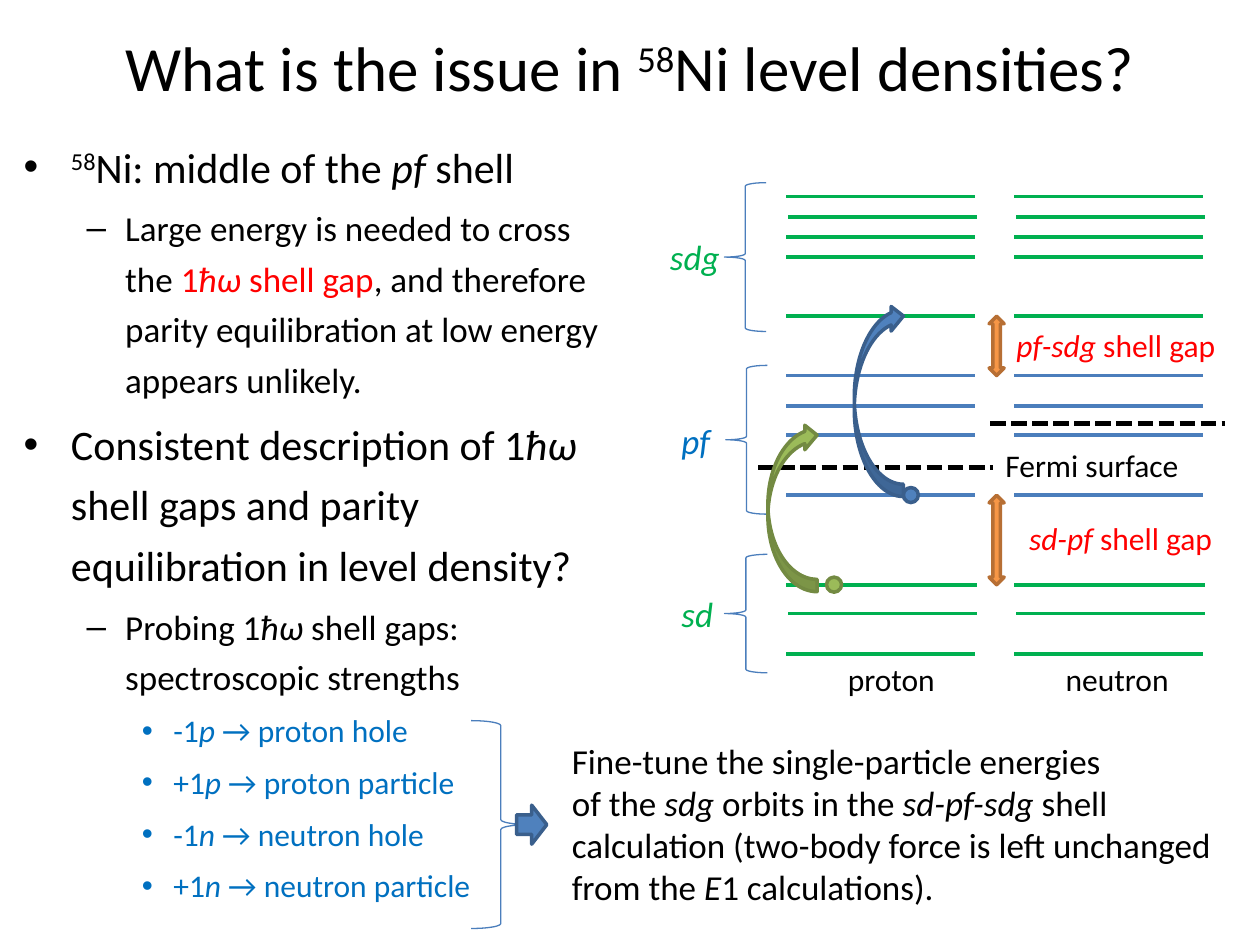
from dataclasses import dataclass

from lxml import etree
from pptx import Presentation
from pptx.dml.color import RGBColor
from pptx.enum import dml, shapes, text
from pptx.oxml import ns
from pptx.util import Pt


@dataclass(frozen=True)
class Theme:
    """Colours and type sizes of the slide."""
    font: str = "Calibri"
    black: str = "000000"
    red: str = "FF0000"
    blue: str = "0070C0"
    green: str = "00B050"
    level_blue: str = "4B7EBC"
    blue_pair: tuple = ("4F81BD", "3A5F8C")
    green_pair: tuple = ("9BBB59", "738A42")
    orange_pair: tuple = ("F79646", "B76F34")
    title: int = 36
    body: tuple = (24, 20, 18)
    shell: int = 20
    label: int = 18


THEME = Theme()
SHAPE = shapes.MSO_SHAPE
BULLETS = (("•", 27, -27), ("–", 58, -22), ("•", 85.5, -18))
PROTON_X, NEUTRON_X, LEVEL_LENGTH = 449.3, 579.6, 107.9
SHELL_LEVELS = (
    (THEME.level_blue, ((283, 0), (248.4, 0), (231.8, 0), (214.6, 0))),
    (THEME.green, ((334.1, 1.2), (350.6, 1.2), (373.7, 0), (180.7, 0), (146.9, 0),
                   (135.4, 0), (334.1, 0), (123.8, 1.2), (112.3, 0))),
)
OUTLINE = (
    (0, [("58", "sup"), "Ni: middle of the ", ("pf", "i"), " shell"]),
    (1, ["Large energy is needed to cross the ", ("1", "red"), ("ħω ", "i red"),
         ("shell gap", "red"),
         ", and therefore parity equilibration at low energy appears unlikely."]),
    (0, ["Consistent description of 1", ("ħω ", "i"),
         "shell gaps and parity equilibration in level density?"]),
    (1, ["Probing 1", ("ħω ", "i"), "shell gaps: spectroscopic strengths"]),
    (2, ["-1", ("p", "i"), " → proton hole"]),
    (2, ["+1", ("p", "i"), " → proton particle"]),
    (2, ["-1", ("n", "i"), " → neutron hole"]),
    (2, ["+1", ("n", "i"), " → neutron particle"]),
)
CONCLUSION = (
    ["Fine-tune the single-particle energies"],
    ["of the ", ("sdg", "i"), " orbits in the ", ("sd-pf-sdg", "i"), " shell"],
    ["calculation (two-body force is left unchanged"],
    ["from the ", ("E", "i"), "1 calculations)."],
)


def rgb(code):
    """Turn a hex code into a colour."""
    return RGBColor.from_string(code)


def add_runs(paragraph, pieces, size, color=THEME.black):
    """Write styled pieces of text into a paragraph."""
    for piece in pieces:
        words, style = (piece, "") if isinstance(piece, str) else piece
        run = paragraph.add_run()
        run.text = words
        run.font.name = THEME.font
        run.font.size = Pt(size)
        run.font.italic = "i" in style.split()
        run.font.color.rgb = rgb(THEME.red if "red" in style else color)
        if "sup" in style:
            run._r.get_or_add_rPr().set("baseline", "30000")


def add_frame(slide, box, wrap):
    """Add a text box and return its frame."""
    frame = slide.shapes.add_textbox(*map(Pt, box)).text_frame
    frame.word_wrap = wrap
    if not wrap:
        frame.auto_size = text.MSO_AUTO_SIZE.SHAPE_TO_FIT_TEXT
    return frame


def add_label(slide, box, lines, size, color=THEME.black):
    """Add an unwrapped label of one or more lines."""
    frame = add_frame(slide, box, False)
    for index, pieces in enumerate(lines):
        paragraph = frame.add_paragraph() if index else frame.paragraphs[0]
        add_runs(paragraph, pieces, size, color)


def add_title(slide):
    """Add the centred heading."""
    frame = add_frame(slide, (8.6, 10.1, 702.8, 55.4), True)
    frame.vertical_anchor = text.MSO_ANCHOR.MIDDLE
    heading = frame.paragraphs[0]
    heading.alignment = text.PP_ALIGN.CENTER
    add_runs(heading, ["What is the issue in ", ("58", "sup"), "Ni level densities?"],
             THEME.title)


def add_outline(slide):
    """Add the bulleted argument."""
    frame = add_frame(slide, (6.5, 71.3, 347.8, 467.3), True)
    for index, (level, pieces) in enumerate(OUTLINE):
        paragraph = frame.add_paragraph() if index else frame.paragraphs[0]
        mark, margin, indent = BULLETS[level]
        size = THEME.body[level]
        paragraph.level = level
        paragraph.line_spacing = 1.2
        if index:
            paragraph.space_before = Pt(size * 0.2)
        properties = paragraph._p.get_or_add_pPr()
        properties.set("marL", str(Pt(margin)))
        properties.set("indent", str(Pt(indent)))
        etree.SubElement(properties, ns.qn("a:buFont")).set("typeface", "Arial")
        etree.SubElement(properties, ns.qn("a:buChar")).set("char", mark)
        add_runs(paragraph, pieces, size, THEME.blue if level == 2 else THEME.black)


def add_level(slide, x, y, length, color, weight=2.25, dashed=False):
    """Add a horizontal energy line."""
    level = slide.shapes.add_connector(
        shapes.MSO_CONNECTOR.STRAIGHT, Pt(x), Pt(y), Pt(x + length), Pt(y))
    level.line.color.rgb = rgb(color)
    level.line.width = Pt(weight)
    if dashed:
        level.line.dash_style = dml.MSO_LINE.SQUARE_DOT
    etree.SubElement(level._element.spPr, ns.qn("a:effectLst"))


def add_figure(slide, preset, box, colors, rotation=0):
    """Add a filled and outlined preset shape."""
    figure = slide.shapes.add_shape(preset, *map(Pt, box))
    figure.shadow.inherit = False
    figure.rotation = rotation
    fill, outline = colors
    figure.fill.solid()
    figure.fill.fore_color.rgb = rgb(fill)
    figure.line.color.rgb = rgb(outline)
    figure.line.width = Pt(2)


def add_brace(slide, preset, box):
    """Add a thin unfilled brace."""
    brace = slide.shapes.add_shape(preset, *map(Pt, box))
    brace.shadow.inherit = False
    brace.fill.background()
    brace.line.color.rgb = rgb(THEME.level_blue)
    brace.line.width = Pt(0.75)


def add_level_scheme(slide):
    """Add the proton and neutron levels with their shells, gaps and jumps."""
    for column in (NEUTRON_X, PROTON_X):
        for color, levels in SHELL_LEVELS:
            for y, offset in levels:
                add_level(slide, column + offset, y, LEVEL_LENGTH, color)
    for name, brace, label, color in (
            ("pf", (414.7, 208.8, 23.8, 85), (382.3, 236.2, 31, 31.7), THEME.blue),
            ("sdg", (414, 104.4, 23.8, 85), (375.8, 131, 43.2, 31.7), THEME.green),
            ("sd", (414, 316.8, 24.5, 67.7), (382.3, 334.8, 32.4, 31.7), THEME.green)):
        add_brace(slide, SHAPE.LEFT_BRACE, brace)
        add_label(slide, label, [[(name, "i")]], THEME.shell, color)
    for name, y, height, label in (
            ("pf-sdg", 180.7, 33.9, (573.8, 182.9, 129.6, 28.8)),
            ("sd-pf", 283, 51.1, (581, 293, 120.2, 28.8))):
        add_figure(slide, SHAPE.UP_DOWN_ARROW, (565.2, y, 8.6, height), THEME.orange_pair)
        add_label(slide, label, [[(name, "i"), " shell gap"]], THEME.label, THEME.red)
    for x, y in ((433.4, 267.1), (565.9, 241.9)):
        add_level(slide, x, y, 134.3, THEME.black, 3, True)
    for name, x, y, width in (("Fermi surface", 567.4, 251.3, 114.5),
                              ("proton", 477.4, 373.7, 64.8),
                              ("neutron", 601.9, 373.7, 74.2)):
        add_label(slide, (x, y, width, 28.8), [[name]], THEME.label)
    for colors, jump, start in (
            (THEME.green_pair, (404.6, 275.8, 96.5, 28.1), (472.3, 329.8)),
            (THEME.blue_pair, (447.1, 214.6, 110.2, 28.1), (516.2, 278.6))):
        add_figure(slide, SHAPE.OVAL, (*start, 8.6, 8.6), colors)
        add_figure(slide, SHAPE.CURVED_DOWN_ARROW, jump, colors, 270)


def add_conclusion(slide):
    """Add the closing remark drawn from the strengths."""
    add_brace(slide, SHAPE.RIGHT_BRACE, (269.3, 411.8, 33.8, 118.8))
    add_label(slide, (319.7, 419, 383.8, 104.4), CONCLUSION, THEME.shell)
    add_figure(slide, SHAPE.RIGHT_ARROW, (295.2, 460.1, 17.3, 22.3), THEME.blue_pair)


def main():
    """Build and save the slide."""
    deck = Presentation()
    deck.slide_width, deck.slide_height = Pt(720), Pt(540)
    slide = deck.slides.add_slide(deck.slide_layouts[6])
    add_title(slide)
    add_outline(slide)
    add_level_scheme(slide)
    add_conclusion(slide)
    deck.save("out.pptx")


if __name__ == "__main__":
    main()
